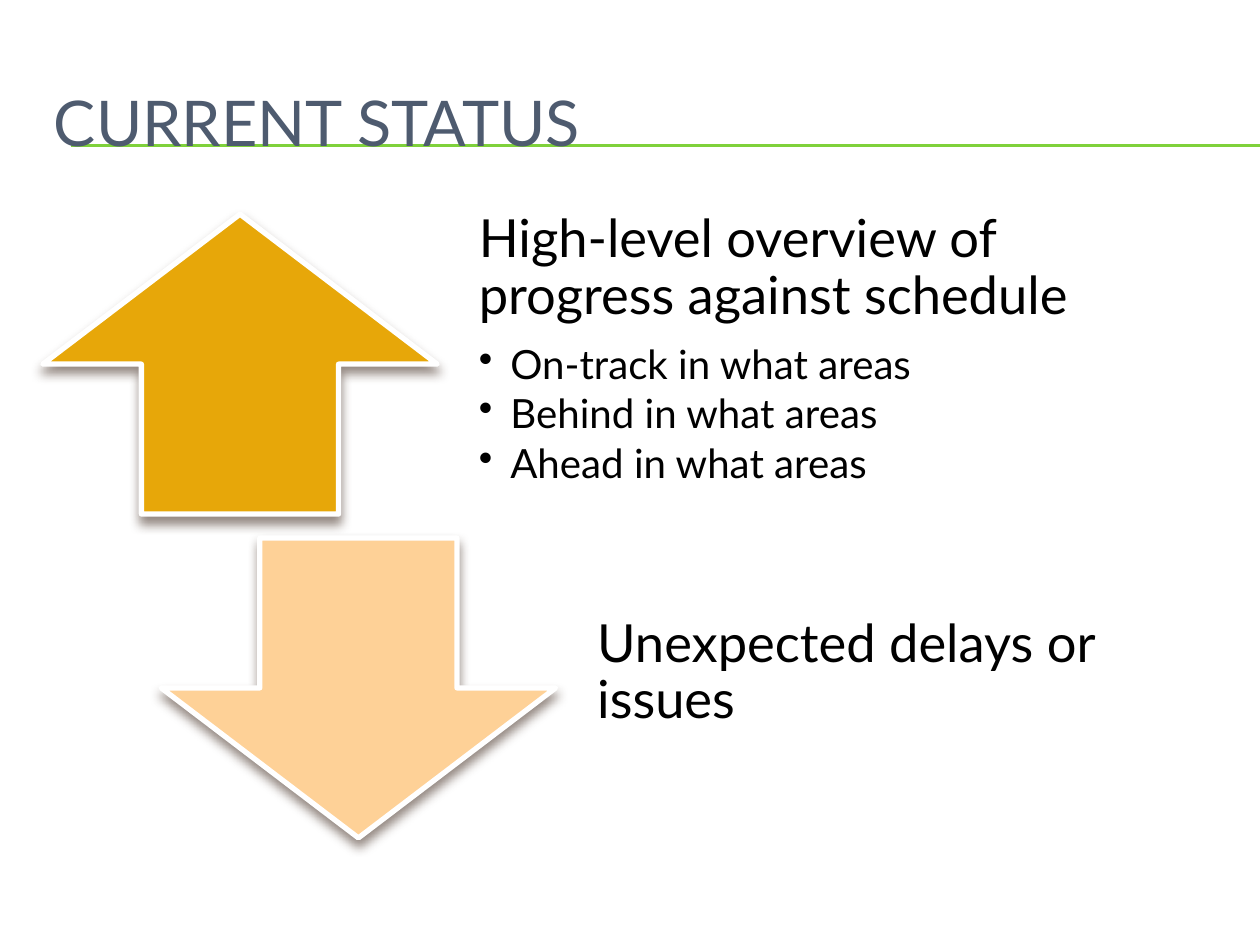
from lxml import etree
from pptx import Presentation
from pptx.dml.color import RGBColor
from pptx.enum.shapes import MSO_CONNECTOR, MSO_SHAPE
from pptx.enum.text import MSO_ANCHOR
from pptx.oxml.ns import qn
from pptx.util import Inches, Pt

STRAIGHT = MSO_CONNECTOR.STRAIGHT
MIDDLE = MSO_ANCHOR.MIDDLE
UP_ARROW = MSO_SHAPE.UP_ARROW
DOWN_ARROW = MSO_SHAPE.DOWN_ARROW

GREEN = RGBColor(0x7F, 0xD1, 0x3B)
SLATE = RGBColor(0x4E, 0x5B, 0x6F)
AMBER = RGBColor(0xE7, 0xA7, 0x09)
PEACH = RGBColor(0xFE, 0xD1, 0x97)
WHITE = RGBColor(0xFF, 0xFF, 0xFF)
BLACK = RGBColor(0x00, 0x00, 0x00)
BROWN = RGBColor(0x4E, 0x3B, 0x30)

ARROW_WIDTH, TEXT_WIDTH, ROW_HEIGHT = 3.13, 5.32, 2.38
TEXT_OFFSET = 3.23


def write(para, text, size, color=BLACK, line_spacing=None, after=0, bullet=False):
    para.line_spacing = line_spacing
    para.space_after = Pt(after)
    span = para.add_run()
    span.text = text
    span.font.name = "Lato"
    span.font.size = Pt(size)
    span.font.color.rgb = color
    if bullet:
        properties = para._p.get_or_add_pPr()
        properties.set("marL", str(Inches(0.25)))
        properties.set("indent", str(Inches(-0.25)))
        etree.SubElement(properties, qn("a:buChar"), char="•")


def add_soft_shadow(shape):
    shape.shadow.inherit = False
    effects = shape._element.spPr.find(qn("a:effectLst"))
    shadow = etree.SubElement(
        effects, qn("a:outerShdw"), blurRad=str(Pt(6)), dist=str(Pt(4)),
        dir="5400000", rotWithShape="0")
    color = etree.SubElement(shadow, qn("a:srgbClr"), val=str(BROWN))
    etree.SubElement(color, qn("a:alpha"), val="60000")


deck = Presentation()
deck.slide_width, deck.slide_height = Inches(10), Inches(7.5)
page = deck.slides.add_slide(deck.slide_layouts[6])

for y in (1.15, 1.16):
    rule = page.shapes.add_connector(
        STRAIGHT, Inches(0.56), Inches(y), Inches(10), Inches(y))
    rule.line.color.rgb = GREEN
    rule.line.width = Pt(0.75)
    etree.SubElement(rule._element.spPr, qn("a:effectLst"))

title = page.shapes.add_textbox(Inches(0.33), Inches(0.5), Inches(9.5), Inches(0.92))
title.text_frame.word_wrap = True
title.text_frame.vertical_anchor = MIDDLE
write(title.text_frame.paragraphs[0], "CURRENT STATUS", 36, color=SLATE)

rows = [
    (0.34, 1.7, UP_ARROW, AMBER, "High-level overview of progress against schedule",
     ["On-track in what areas", "Behind in what areas", "Ahead in what areas"]),
    (1.28, 4.27, DOWN_ARROW, PEACH, "Unexpected delays or issues", []),
]
for left, top, arrow_kind, fill, heading, points in rows:
    arrow = page.shapes.add_shape(
        arrow_kind, Inches(left), Inches(top), Inches(ARROW_WIDTH), Inches(ROW_HEIGHT))
    arrow.fill.solid()
    arrow.fill.fore_color.rgb = fill
    arrow.line.color.rgb = WHITE
    arrow.line.width = Pt(3)
    add_soft_shadow(arrow)

    box = page.shapes.add_textbox(
        Inches(left + TEXT_OFFSET), Inches(top), Inches(TEXT_WIDTH), Inches(ROW_HEIGHT))
    frame = box.text_frame
    frame.word_wrap = True
    frame.vertical_anchor = MIDDLE
    frame.margin_left = frame.margin_right = frame.margin_bottom = Inches(0.23)
    frame.margin_top = 0
    write(frame.paragraphs[0], heading, 30, line_spacing=0.9, after=10.5)
    for point in points:
        para = frame.add_paragraph()
        para.level = 1
        write(para, point, 23, line_spacing=0.9, after=3.45, bullet=True)

deck.save("out.pptx")
